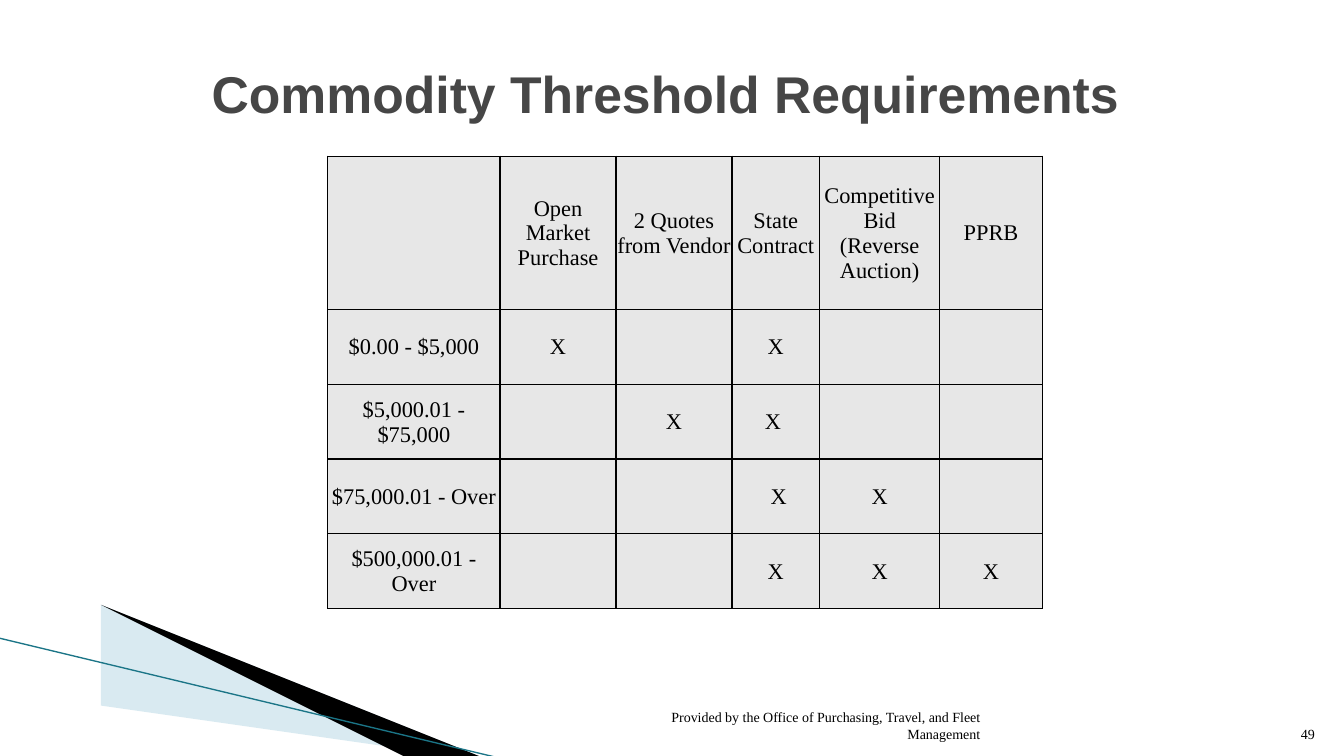
import pptx
import pptx.dml.color
import pptx.enum.text
import pptx.oxml
import pptx.util
from lxml import etree
from pptx.dml.color import RGBColor
from pptx.enum.text import MSO_ANCHOR, PP_ALIGN
from pptx.util import Inches

BLACK = RGBColor(0x00, 0x00, 0x00)
TITLE_GRAY = RGBColor(0x46, 0x46, 0x46)
CELL_GRAY = RGBColor(0xE7, 0xE7, 0xE7)
PALE_BLUE = RGBColor(0xA0, 0xCB, 0xDC)
TEAL = RGBColor(0x1B, 0x75, 0x87)
SERIF = "Times New Roman"

COLUMN_WIDTHS = [1.71, 1.15, 1.15, 0.87, 1.19, 1.02]
HEADER_HEIGHT = 1.52
THRESHOLDS = [
    ["", "Open Market Purchase", "2 Quotes from Vendor", "State Contract",
     "Competitive Bid\n(Reverse Auction)", "PPRB"],
    ["$0.00 - $5,000", "X", "", "X", "", ""],
    ["$5,000.01 - $75,000", "", "X", "X ", "", ""],
    ["$75,000.01 - Over", "", "", " X", "X", ""],
    ["$500,000.01 - Over", "", "", "X", "X", "X"],
]


def style(frame, size, font, color, align):
    for paragraph in frame.paragraphs:
        paragraph.alignment = align
        paragraph.font.size = pptx.util.Pt(size)
        paragraph.font.name = font
        paragraph.font.color.rgb = color


def add_text(slide, box, text, size, font, color, align, anchor):
    frame = slide.shapes.add_textbox(*map(Inches, box)).text_frame
    frame.word_wrap = True
    frame.vertical_anchor = anchor
    frame.text = text
    style(frame, size, font, color, align)
    return frame


def add_wedge(slide, left, top, points, color):
    """Draw a filled outline whose points are inches from left, top."""
    corners = [(left + x, top + y) for x, y in points]
    builder = slide.shapes.build_freeform(*corners[0], scale=Inches(1))
    builder.add_line_segments(corners[1:], close=True)
    wedge = builder.convert_to_shape()
    wedge.shadow.inherit = False
    wedge.line.fill.background()
    wedge.fill.solid()
    wedge.fill.fore_color.rgb = color
    return wedge


def add_corner_swoosh(slide, left, top):
    pale = add_wedge(slide, left + 0.74, top + 0.17,
                     [(0, 0.01), (7.2, 1.01), (5.35, 1.01), (0, 0)], PALE_BLUE)
    pale_color = pale.fill._xPr.find(".//" + pptx.oxml.ns.qn("a:srgbClr"))
    etree.SubElement(pale_color, pptx.oxml.ns.qn("a:alpha"), val="40000")
    add_wedge(slide, left + 0.72, top + 0.16,
              [(0, 0), (5.38, 1.02), (4.25, 1.03), (0.01, 0.01)], BLACK)
    edge = slide.shapes.add_connector(
        pptx.enum.shapes.MSO_CONNECTOR.STRAIGHT,
        Inches(left), Inches(top), Inches(left + 4.96), Inches(top + 1.19))
    edge.line.color.rgb = TEAL
    edge.line.width = pptx.util.Pt(0.95)
    etree.SubElement(edge._element.spPr, pptx.oxml.ns.qn("a:effectLst"))


def add_borders(cell):
    properties = cell._tc.get_or_add_tcPr()
    for index, side in enumerate(("lnL", "lnR", "lnT", "lnB")):
        border = pptx.oxml.parse_xml(
            f'<a:{side} {pptx.oxml.ns.nsdecls("a")} w="12700"><a:solidFill>'
            f'<a:srgbClr val="{BLACK}"/></a:solidFill></a:{side}>')
        properties.insert(index, border)


def add_threshold_table(slide, left, top, height):
    body_height = (height - HEADER_HEIGHT) / (len(THRESHOLDS) - 1)
    table = slide.shapes.add_table(
        len(THRESHOLDS), len(COLUMN_WIDTHS), Inches(left), Inches(top),
        Inches(sum(COLUMN_WIDTHS)), Inches(height)).table
    for column, width in zip(table.columns, COLUMN_WIDTHS):
        column.width = Inches(width)
    for row_index, labels in enumerate(THRESHOLDS):
        row = table.rows[row_index]
        row.height = Inches(body_height if row_index else HEADER_HEIGHT)
        for cell, label in zip(row.cells, labels):
            cell.text = label
            cell.vertical_anchor = MSO_ANCHOR.MIDDLE
            cell.margin_left = cell.margin_right = cell.margin_top = Inches(0.01)
            cell.margin_bottom = 0
            cell.fill.solid()
            cell.fill.fore_color.rgb = CELL_GRAY
            style(cell.text_frame, 16, SERIF, BLACK, PP_ALIGN.CENTER)
            add_borders(cell)


def add_footer(slide, top, height):
    for left, width, text in (
            (6.39, 3.43, "Provided by the Office of Purchasing, Travel, and Fleet Management"),
            (12.61, 0.53, "49")):
        add_text(slide, (left, top, width, height), text, 10, SERIF, BLACK,
                 PP_ALIGN.RIGHT, MSO_ANCHOR.BOTTOM)


def main():
    deck = pptx.Presentation()
    deck.slide_width, deck.slide_height = Inches(13.33), Inches(7.5)
    slide = deck.slides.add_slide(deck.slide_layouts[6])
    add_corner_swoosh(slide, -0.01, 6.33)
    add_threshold_table(slide, 3.25, 1.55, 4.49)
    title = add_text(slide, (2, 0.3, 9.42, 1.25), "Commodity Threshold Requirements",
                     36.9, "Arial", TITLE_GRAY, PP_ALIGN.LEFT, MSO_ANCHOR.MIDDLE)
    title.paragraphs[0].font.bold = True
    add_footer(slide, 7.01, 0.4)
    deck.save("out.pptx")


if __name__ == "__main__":
    main()
